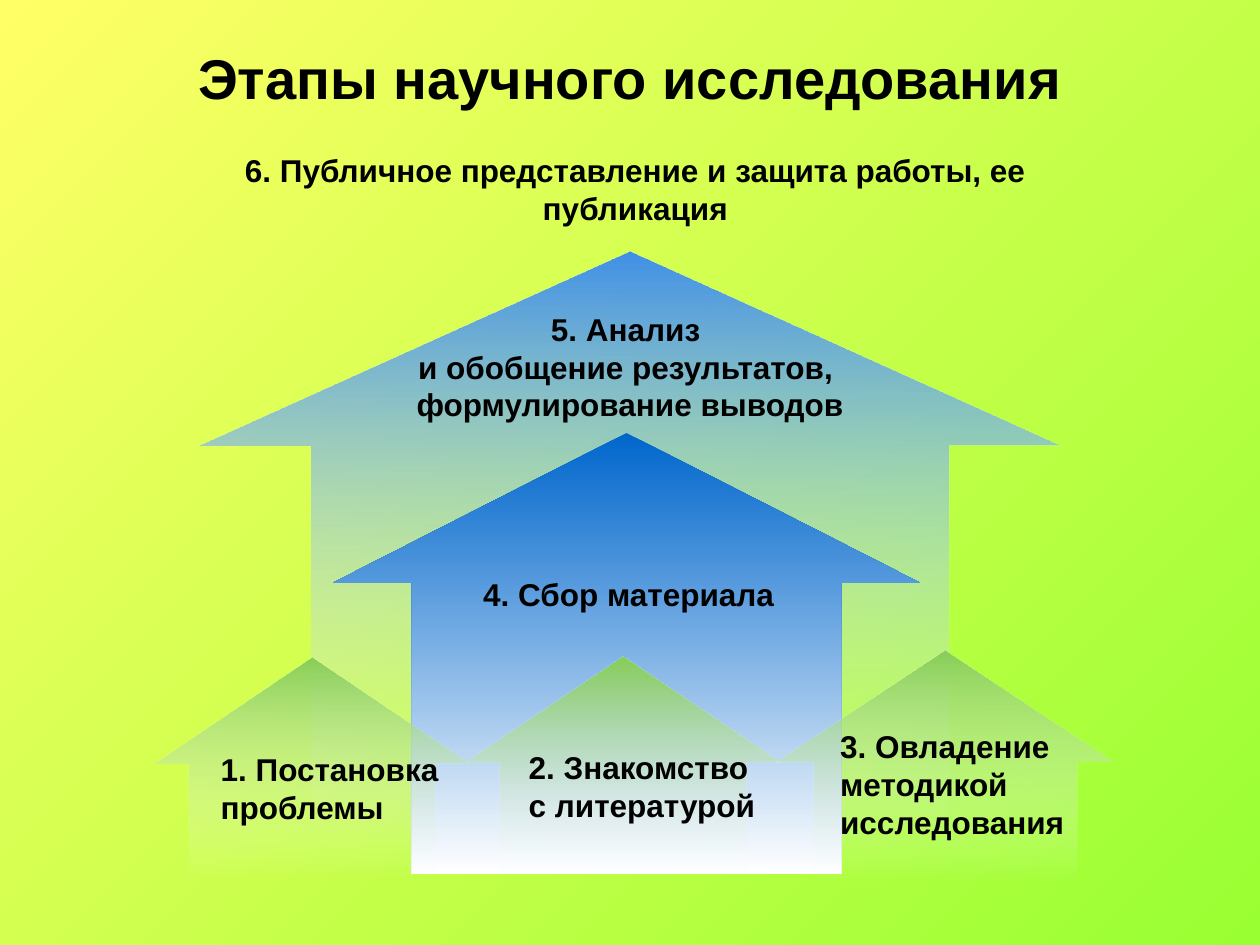
from dataclasses import dataclass

from lxml import etree
from pptx import Presentation
from pptx import util as u
from pptx.dml import color, fill as dml
from pptx.enum import shapes, text
from pptx.oxml import ns

BLACK, WHITE = "000000", "FFFFFF"
GREEN = "88CE58"
LEFT, CENTER = text.PP_ALIGN.LEFT, text.PP_ALIGN.CENTER


@dataclass
class Arrow:
    x: float
    y: float
    w: float
    h: float
    shaft: float
    head: float
    top: str
    fades: bool = True


@dataclass
class Label:
    x: float
    y: float
    w: float
    h: float
    lines: tuple[str, ...]
    align: text.PP_ALIGN = LEFT
    size: float = 18
    wrap: bool = False
    grow: bool = True


def rgb(value: str) -> color.RGBColor:
    return color.RGBColor.from_string(value)


def set_gradient(fill: dml.FillFormat, start: str, end: str, angle: float) -> None:
    fill.gradient()
    fill.gradient_angle = angle
    for stop, value in zip(fill.gradient_stops, (start, end)):
        stop.color.rgb = rgb(value)


def draw_arrow(s, a: Arrow) -> None:
    sp = s.shapes.add_shape(shapes.MSO_SHAPE.UP_ARROW,
                            u.Pt(a.x), u.Pt(a.y), u.Pt(a.w), u.Pt(a.h))
    sp.adjustments[0], sp.adjustments[1] = a.shaft, a.head
    sp.shadow.inherit = False
    sp.line.fill.background()
    set_gradient(sp.fill, a.top, WHITE, 270)
    if a.fades:
        last = sp.element.spPr.findall(".//" + ns.qn("a:srgbClr"))[-1]
        etree.SubElement(last, ns.qn("a:alpha")).set("val", "0")


def draw_label(s, b: Label) -> None:
    sp = s.shapes.add_textbox(u.Pt(b.x), u.Pt(b.y), u.Pt(b.w), u.Pt(b.h))
    tf = sp.text_frame
    tf.word_wrap = b.wrap
    if b.grow:
        tf.auto_size = text.MSO_AUTO_SIZE.SHAPE_TO_FIT_TEXT
    else:
        tf.vertical_anchor = text.MSO_ANCHOR.MIDDLE
    for i, line in enumerate(b.lines):
        p = tf.add_paragraph() if i else tf.paragraphs[0]
        p.alignment = b.align
        r = p.add_run()
        r.text = line
        r.font.name = "Arial"
        r.font.size = u.Pt(b.size)
        r.font.bold = True
        r.font.color.rgb = rgb(BLACK)


def stage_arrow(x: float, y: float, w: float = 180, h: float = 126) -> Arrow:
    return Arrow(x, y, w, h, 0.78, 0.48, GREEN)


ITEMS = (
    Label(36, 22, 648, 44, ("Этапы научного исследования",), CENTER, 32, True, False),
    Arrow(114, 144, 492, 336, 0.74, 0.33, "4090E8"),
    Label(82, 83, 562, 50.5,
          ("6. Публичное представление и защита работы, ее публикация",), CENTER, wrap=True),
    Arrow(190, 247.5, 336, 252, 0.73, 0.34, "0066CC", fades=False),
    stage_arrow(444, 372, 192, 132),
    stage_arrow(266, 375),
    Label(295, 424, 146, 50.5, ("2. Знакомство", "с литературой")),
    Label(473, 412, 143, 72, ("3. Овладение", "методикой", "исследования")),
    Label(268.5, 325, 181.5, 29, ("4. Сбор материала",), CENTER),
    Label(229.5, 173.5, 261, 72,
          ("5. Анализ ", "и обобщение результатов, ", "формулирование выводов"), CENTER),
    stage_arrow(88.5, 376),
    Label(119, 425, 145, 50.5, ("1. Постановка", "проблемы")),
)


def main() -> None:
    prs = Presentation()
    prs.slide_width, prs.slide_height = u.Pt(720), u.Pt(540)
    s = prs.slides.add_slide(prs.slide_layouts[6])
    set_gradient(s.background.fill, "FFFF66", "99FF33", 315)
    for item in ITEMS:
        if isinstance(item, Arrow):
            draw_arrow(s, item)
        else:
            draw_label(s, item)
    prs.save("out.pptx")


if __name__ == "__main__":
    main()
